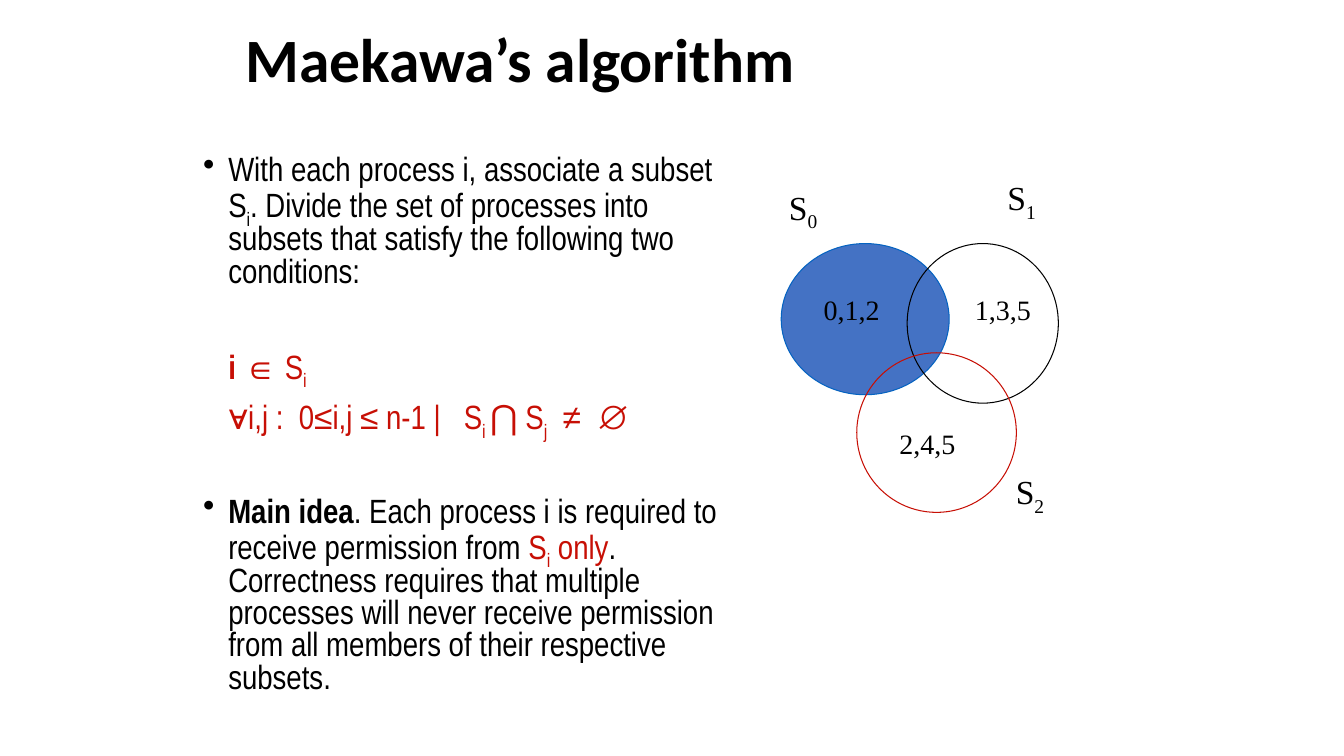
from dataclasses import dataclass

import pptx
import pptx.dml.color
import pptx.enum.text
import pptx.oxml
import pptx.util
from lxml import etree

EMU_PER_PX = 9525
COLORS = {"black": "000000", "red": "C70F05", "blue": "4472C4", "edge": "0563C1"}
TITLE_FONT, BODY_FONT, LABEL_FONT = "Calibri", "Arial Narrow", "Times New Roman"
INDENT = 24


@dataclass(frozen=True)
class Box:
    left: int
    top: int
    width: int
    height: int


@dataclass(frozen=True)
class Span:
    text: str
    color: str = "black"
    bold: bool = False
    subscript: bool = False


@dataclass(frozen=True)
class Para:
    spans: tuple[Span, ...]
    bullet: bool = False
    space_before: int = 10


@dataclass(frozen=True)
class Circle:
    box: Box
    line: str
    fill: str | None = None


@dataclass(frozen=True)
class Label:
    box: Box
    size: int
    spans: tuple[Span, ...]


def member_label(left: int, top: int, members: str) -> Label:
    return Label(Box(left, top, 73, 41), 20, (Span(members),))


def set_label(left: int, top: int, index: str) -> Label:
    return Label(Box(left, top, 48, 48), 24, (Span("S"), Span(index, subscript=True)))


BODY = (
    Para((
        Span("With each process i, associate a subset S"),
        Span("i", subscript=True),
        Span(". Divide the set of processes into subsets that satisfy "
             "the following two conditions:"),
    ), bullet=True),
    Para((
        Span("i ∈ ", "red", bold=True),
        Span("S", "red"),
        Span("i", "red", subscript=True),
    ), space_before=43),
    Para((
        Span("∀i,j :  0≤i,j ≤ n-1 |   S", "red"),
        Span("i ", "red", subscript=True),
        Span("⋂ S", "red"),
        Span("j", "red", subscript=True),
        Span("  ≠  ∅", "red"),
    )),
    Para((
        Span("Main idea", bold=True),
        Span(". Each process i is required to receive permission from "),
        Span("S", "red"),
        Span("i", "red", subscript=True),
        Span(" only", "red"),
        Span(". Correctness requires that multiple processes will never receive "
             "permission from all members of their respective subsets."),
    ), bullet=True, space_before=43),
)

CIRCLES = (
    Circle(Box(744, 232, 160, 144), "edge", "blue"),
    Circle(Box(864, 232, 144, 152), "black"),
    Circle(Box(816, 336, 152, 152), "red"),
)

LABELS = (
    member_label(775, 274, "0,1,2"),
    member_label(919, 274, "1,3,5"),
    member_label(847, 401, "2,4,5"),
    set_label(742, 173, "0"),
    set_label(950, 164, "1"),
    set_label(958, 444, "2"),
)


def px(length: int) -> pptx.util.Emu:
    return pptx.util.Emu(length * EMU_PER_PX)


def rgb(name: str) -> pptx.dml.color.RGBColor:
    return pptx.dml.color.RGBColor.from_string(COLORS[name])


def place(box: Box) -> tuple[pptx.util.Emu, ...]:
    return px(box.left), px(box.top), px(box.width), px(box.height)


def write_spans(paragraph, spans: tuple[Span, ...], font: str, size: int) -> None:
    paragraph.font.name = font
    paragraph.font.size = pptx.util.Pt(size)
    for span in spans:
        run = paragraph.add_run()
        run.text = span.text
        run.font.color.rgb = rgb(span.color)
        if span.bold:
            run.font.bold = True
        if span.subscript:
            run.font._element.set("baseline", "-25000")


def indent(paragraph, bullet: bool) -> None:
    properties = paragraph._p.get_or_add_pPr()
    properties.set("marL", str(px(INDENT)))
    properties.set("indent", str(px(-INDENT if bullet else 0)))
    if bullet:
        mark = etree.Element(pptx.oxml.ns.qn("a:buChar"), char="•")
        properties.insert_element_before(mark, "a:tabLst", "a:defRPr", "a:extLst")


def add_title(page, box: Box, text: str) -> None:
    title = page.shapes.title
    title.left, title.top, title.width, title.height = place(box)
    title.text_frame.vertical_anchor = pptx.enum.text.MSO_ANCHOR.MIDDLE
    paragraph = title.text_frame.paragraphs[0]
    paragraph.alignment = pptx.enum.text.PP_ALIGN.LEFT
    paragraph.line_spacing = 0.9
    write_spans(paragraph, (Span(text, bold=True),), TITLE_FONT, 44)


def add_body(page, box: Box, paras: tuple[Para, ...]) -> None:
    frame = page.shapes.add_textbox(*place(box)).text_frame
    frame.word_wrap = True
    for number, para in enumerate(paras):
        paragraph = frame.add_paragraph() if number else frame.paragraphs[0]
        paragraph.line_spacing = 0.8
        paragraph.space_before = pptx.util.Pt(para.space_before)
        write_spans(paragraph, para.spans, BODY_FONT, 24)
        indent(paragraph, para.bullet)


def add_circle(page, circle: Circle) -> None:
    shape = page.shapes.add_shape(
        pptx.enum.shapes.MSO_SHAPE.OVAL, *place(circle.box))
    shape.shadow.inherit = False
    shape.line.color.rgb = rgb(circle.line)
    shape.line.width = pptx.util.Pt(0.75)
    if circle.fill:
        shape.fill.solid()
        shape.fill.fore_color.rgb = rgb(circle.fill)
    else:
        shape.fill.background()


def add_label(page, label: Label) -> None:
    frame = page.shapes.add_textbox(*place(label.box)).text_frame
    frame.word_wrap = False
    frame.auto_size = pptx.enum.text.MSO_AUTO_SIZE.SHAPE_TO_FIT_TEXT
    write_spans(frame.paragraphs[0], label.spans, LABEL_FONT, label.size)


def main() -> None:
    deck = pptx.Presentation()
    deck.slide_width, deck.slide_height = px(1280), px(720)
    page = deck.slides.add_slide(deck.slide_layouts.get_by_name("Title Only"))
    add_title(page, Box(224, 0, 816, 120), "Maekawa’s algorithm")
    add_body(page, Box(184, 144, 536, 520), BODY)
    for circle in CIRCLES:
        add_circle(page, circle)
    for label in LABELS:
        add_label(page, label)
    deck.save("out.pptx")


if __name__ == "__main__":
    main()
